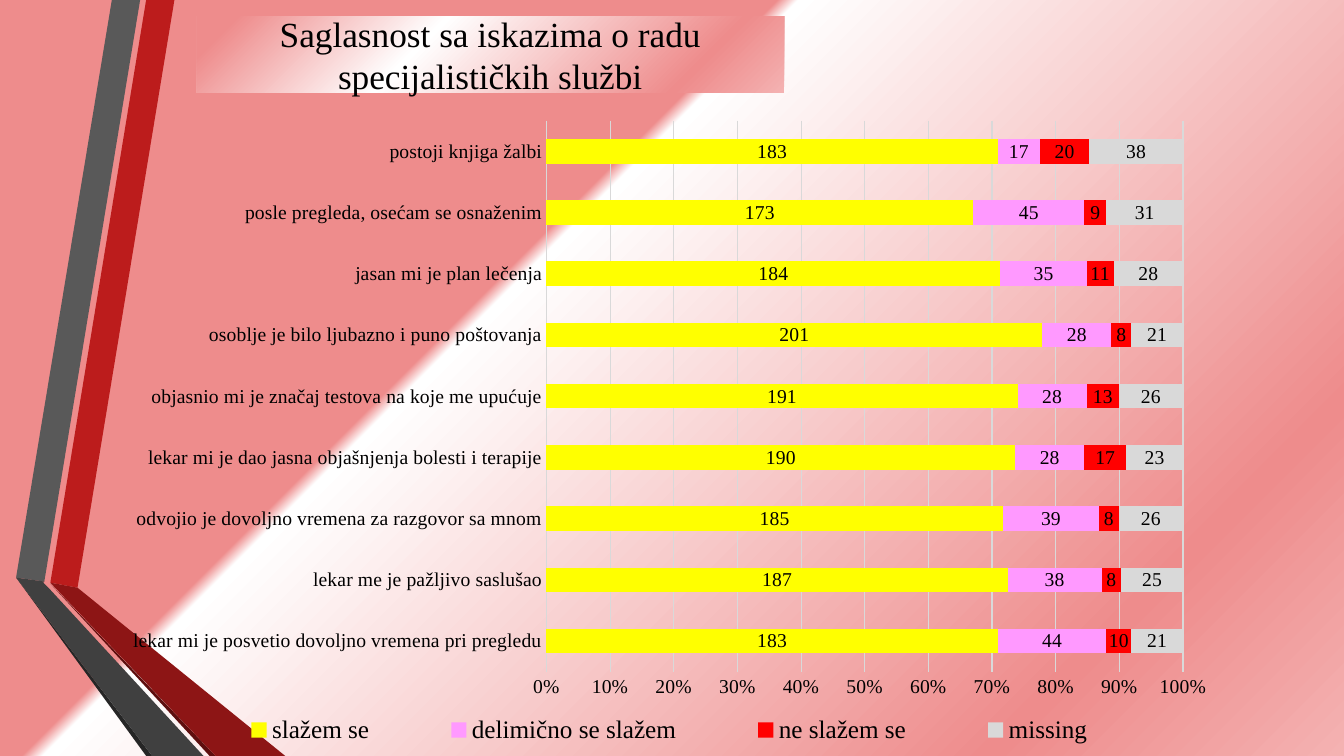
"""Build a slide with a stacked bar chart of agreement with statements about specialist services."""
from dataclasses import dataclass

from lxml import etree
from pptx import Presentation
from pptx.chart.data import CategoryChartData
from pptx.dml.color import RGBColor
from pptx.enum.chart import XL_CHART_TYPE, XL_LEGEND_POSITION, XL_TICK_MARK
from pptx.enum.shapes import MSO_SHAPE
from pptx.enum.text import MSO_ANCHOR, PP_ALIGN
from pptx.oxml.ns import qn
from pptx.util import Pt

BAR_STACKED_100 = XL_CHART_TYPE.BAR_STACKED_100
LEGEND_BOTTOM = XL_LEGEND_POSITION.BOTTOM
NO_TICK = XL_TICK_MARK.NONE
RECTANGLE = MSO_SHAPE.RECTANGLE
MIDDLE = MSO_ANCHOR.MIDDLE
CENTER = PP_ALIGN.CENTER

FONT = "Times New Roman"
COLORS = {
    "text": "000000", "grid": "D9D9D9",
    "rose": "EE8C8C", "white": "FFFFFF", "blush": "F4B2B2",
    "red": "BC1C1C", "maroon": "8D1515", "maroon edge": "5E0E0E",
    "grey": "595959", "charcoal": "404040", "charcoal edge": "262626",
    "agree": "FFFF00", "partly": "FF99FF", "disagree": "FF0000", "missing": "D9D9D9",
}


@dataclass(frozen=True)
class Ribbon:
    color: str
    corners: tuple[tuple[float, float], ...]


@dataclass(frozen=True)
class Answer:
    name: str
    color: str
    counts: tuple[int, ...]


RIBBONS = (
    Ribbon("red", ((36, 416.2), (55.4, 419.8), (124.6, 0), (104.4, 0))),
    Ribbon("grey", ((100.1, 0), (79.9, 0), (11.5, 412.6), (31.7, 415.4))),
    Ribbon("charcoal edge", ((11.5, 412.6), (104.4, 540), (108.7, 540))),
    Ribbon("maroon edge", ((36, 416.9), (149.8, 540), (154.1, 540))),
    Ribbon("maroon", ((36, 416.2), (154.1, 540), (203.8, 540), (55.4, 419.8))),
    Ribbon("charcoal", ((145.4, 540), (34.6, 419.8), (31, 416.2), (31.7, 415.4),
                        (11.5, 412.6), (108.7, 540))),
)
STATEMENTS = (
    "lekar mi je posvetio dovoljno vremena pri pregledu",
    "lekar me je pažljivo saslušao",
    "odvojio je dovoljno vremena za razgovor sa mnom",
    "lekar mi je dao jasna objašnjenja bolesti i terapije",
    "objasnio mi je značaj testova na koje me upućuje",
    "osoblje je bilo ljubazno i puno poštovanja",
    "jasan mi je plan lečenja",
    "posle pregleda, osećam se osnaženim",
    "postoji knjiga žalbi",
)
ANSWERS = (
    Answer("slažem se", "agree", (183, 187, 185, 190, 191, 201, 184, 173, 183)),
    Answer("delimično se slažem", "partly", (44, 38, 39, 28, 28, 28, 35, 45, 17)),
    Answer("ne slažem se", "disagree", (10, 8, 8, 17, 13, 8, 11, 9, 20)),
    Answer("missing", "missing", (21, 25, 26, 23, 26, 21, 28, 31, 38)),
)


def rgb(name: str) -> RGBColor:
    return RGBColor.from_string(COLORS[name])


def format_font(font, size: float, color: str = "text") -> None:
    font.name = FONT
    font.size = Pt(size)
    font.color.rgb = rgb(color)


def fill_gradient(owner, fill, first_stop: int) -> None:
    """Fill with rose, white, rose and blush bands spreading from the top left corner."""
    fill.gradient()
    gradient = owner.find(".//" + qn("a:gradFill"))
    for child in list(gradient):
        gradient.remove(child)
    stops = etree.SubElement(gradient, qn("a:gsLst"))
    for position, color in ((first_stop, "rose"), (38, "white"), (83, "rose"), (100, "blush")):
        stop = etree.SubElement(stops, qn("a:gs"), pos=str(position * 1000))
        etree.SubElement(stop, qn("a:srgbClr"), val=COLORS[color])
    shade = etree.SubElement(gradient, qn("a:path"), path="circle")
    etree.SubElement(shade, qn("a:fillToRect"), r="100000", b="100000")


def add_ribbon(page, ribbon: Ribbon) -> None:
    start, *others = [(Pt(x), Pt(y)) for x, y in ribbon.corners]
    builder = page.shapes.build_freeform(*start)
    builder.add_line_segments(others, close=True)
    shape = builder.convert_to_shape()
    shape.shadow.inherit = False
    shape.fill.solid()
    shape.fill.fore_color.rgb = rgb(ribbon.color)
    shape.line.fill.background()


def add_title(page, text: str, *, size: float, left: float, top: float,
              width: float, height: float) -> None:
    box = page.shapes.add_shape(RECTANGLE, Pt(left), Pt(top), Pt(width), Pt(height))
    box.shadow.inherit = False
    fill_gradient(box.element, box.fill, 6)
    box.line.fill.background()
    frame = box.text_frame
    frame.word_wrap = True
    frame.vertical_anchor = MIDDLE
    para = frame.paragraphs[0]
    para.alignment = CENTER
    span = para.add_run()
    span.text = text
    format_font(span.font, size)


def make_layout(inner: bool, **fractions: float):
    """Return a manual chart layout in fractions of the chart area."""
    layout = etree.Element(qn("c:layout"))
    manual = etree.SubElement(layout, qn("c:manualLayout"))
    if inner:
        etree.SubElement(manual, qn("c:layoutTarget"), val="inner")
    for axis in "xy":
        etree.SubElement(manual, qn(f"c:{axis}Mode"), val="edge")
    for side, fraction in fractions.items():
        etree.SubElement(manual, qn(f"c:{side}"), val=str(fraction))
    return layout


def replace_layout(parent, layout, index: int) -> None:
    for old in parent.findall(qn("c:layout")):
        parent.remove(old)
    parent.insert(index, layout)


def add_answer_chart(page, left: float, top: float, width: float, height: float) -> None:
    data = CategoryChartData()
    data.categories = STATEMENTS
    for answer in ANSWERS:
        data.add_series(answer.name, answer.counts)
    chart = page.shapes.add_chart(BAR_STACKED_100, Pt(left), Pt(top), Pt(width),
                                  Pt(height), data).chart
    chart.has_title = False
    format_font(chart.font, 14)

    plot = chart.plots[0]
    plot.vary_by_categories = False
    plot.gap_width = 150
    plot.overlap = 100
    for series, answer in zip(plot.series, ANSWERS):
        series.format.fill.solid()
        series.format.fill.fore_color.rgb = rgb(answer.color)
        labels = series.data_labels
        labels.show_value = True
        format_font(labels.font, 14)

    for axis in (chart.category_axis, chart.value_axis):
        axis.major_tick_mark = NO_TICK
        axis.minor_tick_mark = NO_TICK
        format_font(axis.tick_labels.font, 14)
    shares = chart.value_axis
    shares.format.line.fill.background()
    shares.has_major_gridlines = True
    shares.tick_labels.number_format = "0%"
    shares.tick_labels.number_format_is_linked = False
    for line in (chart.category_axis.format.line, shares.major_gridlines.format.line):
        line.color.rgb = rgb("grid")
        line.width = Pt(0.75)

    chart.has_legend = True
    legend = chart.legend
    legend.position = LEGEND_BOTTOM
    legend.include_in_layout = False
    format_font(legend.font, 18)
    area = chart.element.find(".//" + qn("c:plotArea"))
    replace_layout(area, make_layout(True, x=0.39, y=0.02, w=0.57, h=0.85), 0)
    key = chart.element.find(".//" + qn("c:legend"))
    replace_layout(key, make_layout(False, x=0.06, y=0.92, w=0.88, h=0.08), 1)


def main() -> None:
    deck = Presentation()
    deck.slide_width, deck.slide_height = Pt(960), Pt(540)
    page = deck.slides.add_slide(deck.slide_layouts[6])
    fill_gradient(page.element, page.background.fill, 37)
    for ribbon in RIBBONS:
        add_ribbon(page, ribbon)
    add_title(page, "Saglasnost sa iskazima o radu specijalističkih službi",
              size=25.2, left=140.4, top=11.5, width=419.8, height=54.7)
    add_answer_chart(page, left=79.2, top=77, width=797.8, height=463)
    deck.save("out.pptx")


if __name__ == "__main__":
    main()
